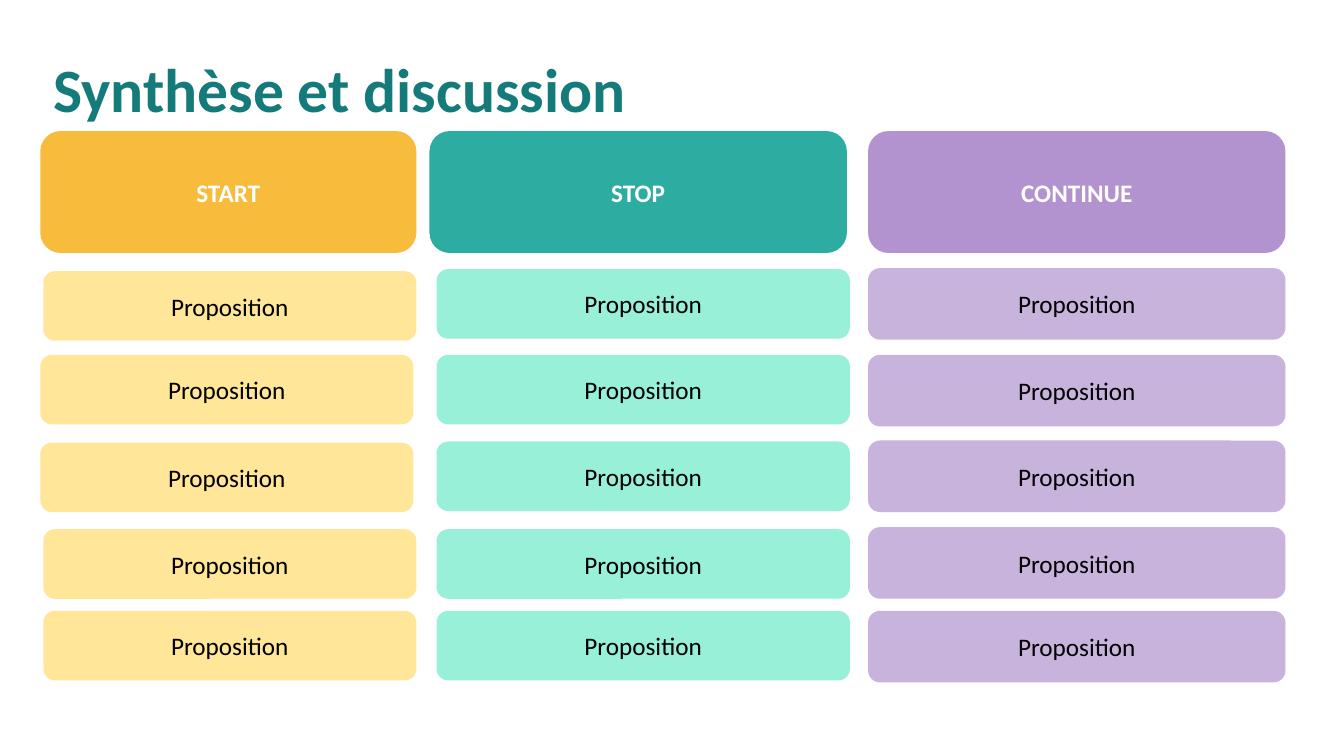
from lxml import etree
from pptx import Presentation, util as u
from pptx.dml.color import RGBColor
from pptx.enum import shapes, text
from pptx.oxml import ns

PX = 9144  # EMU per px, 100 px to the inch
WHITE = RGBColor(0xFF, 0xFF, 0xFF)
BLACK = RGBColor(0x00, 0x00, 0x00)
DARK_TEAL = RGBColor(0x14, 0x7A, 0x7A)
AMBER = RGBColor(0xF7, 0xBC, 0x3B)
PALE_AMBER = RGBColor(0xFF, 0xE6, 0x99)
TEAL = RGBColor(0x2D, 0xAD, 0xA1)
MINT = RGBColor(0x99, 0xF0, 0xD9)
PURPLE = RGBColor(0xB2, 0x93, 0xCF)

TITLE_FORMAT = {"name": "Calibri", "size": u.Pt(44), "bold": True}
HEADER_FORMAT = {"name": "Calibri", "size": u.Pt(18), "bold": True}
CARD_FORMAT = {"name": "Calibri", "size": u.Pt(18), "bold": False}

HEADER_TOP, HEADER_HEIGHT = 130, 121
COLUMNS = [
    {"name": "START", "left": 40, "width": 373, "color": AMBER,
     "card_color": PALE_AMBER, "card_width": 370, "card_height": 69, "opacity": 100,
     "cards": [(43, 269), (40, 352), (40, 439), (43, 525), (43, 606)]},
    {"name": "STOP", "left": 426, "width": 414, "color": TEAL,
     "card_color": MINT, "card_width": 410, "card_height": 69, "opacity": 100,
     "cards": [(433, top) for top in (267, 352, 438, 525, 606)]},
    {"name": "CONTINUE", "left": 861, "width": 414, "color": PURPLE,
     "card_color": PURPLE, "card_width": 414, "card_height": 71, "opacity": 70,
     "cards": [(861, top) for top in (266, 352, 437, 523, 606)]},
]


def px(*lengths):
    return [u.Emu(length * PX) for length in lengths]


def write(para, words, color, font_format):
    span = para.add_run()
    span.text = words
    for key, value in font_format.items():
        setattr(span.font, key, value)
    span.font.color.rgb = color


def add_title(page, words):
    box = page.shapes.add_textbox(*px(43, 54, 1234, 62))
    box.text_frame.word_wrap = True
    para = box.text_frame.paragraphs[0]
    para.line_spacing = 0.9
    write(para, words, DARK_TEAL, TITLE_FORMAT)


def add_card(page, area, words, fill, color, font_format, opacity=100):
    card = page.shapes.add_shape(shapes.MSO_SHAPE.ROUNDED_RECTANGLE, *px(*area))
    card.shadow.inherit = False
    card.fill.solid()
    card.fill.fore_color.rgb = fill
    card.line.fill.background()
    if opacity < 100:
        shade = card.fill._xPr.find(".//" + ns.qn("a:srgbClr"))
        etree.SubElement(shade, ns.qn("a:alpha"), val=str(opacity * 1000))
    frame = card.text_frame
    frame.word_wrap = True
    frame.vertical_anchor = text.MSO_ANCHOR.MIDDLE
    para = frame.paragraphs[0]
    para.alignment = text.PP_ALIGN.CENTER
    write(para, words, color, font_format)


def add_column(page, column):
    # Header
    header_area = (column["left"], HEADER_TOP, column["width"], HEADER_HEIGHT)
    add_card(page, header_area, column["name"], column["color"], WHITE, HEADER_FORMAT)
    # Propositions
    for left, top in column["cards"]:
        area = (left, top, column["card_width"], column["card_height"])
        add_card(page, area, "Proposition", column["card_color"], BLACK,
                 CARD_FORMAT, column["opacity"])


def main():
    deck = Presentation()
    deck.slide_width, deck.slide_height = px(1333, 750)
    page = deck.slides.add_slide(deck.slide_layouts[6])
    for column in COLUMNS:
        add_column(page, column)
    add_title(page, "Synthèse et discussion")
    deck.save("out.pptx")


if __name__ == "__main__":
    main()
